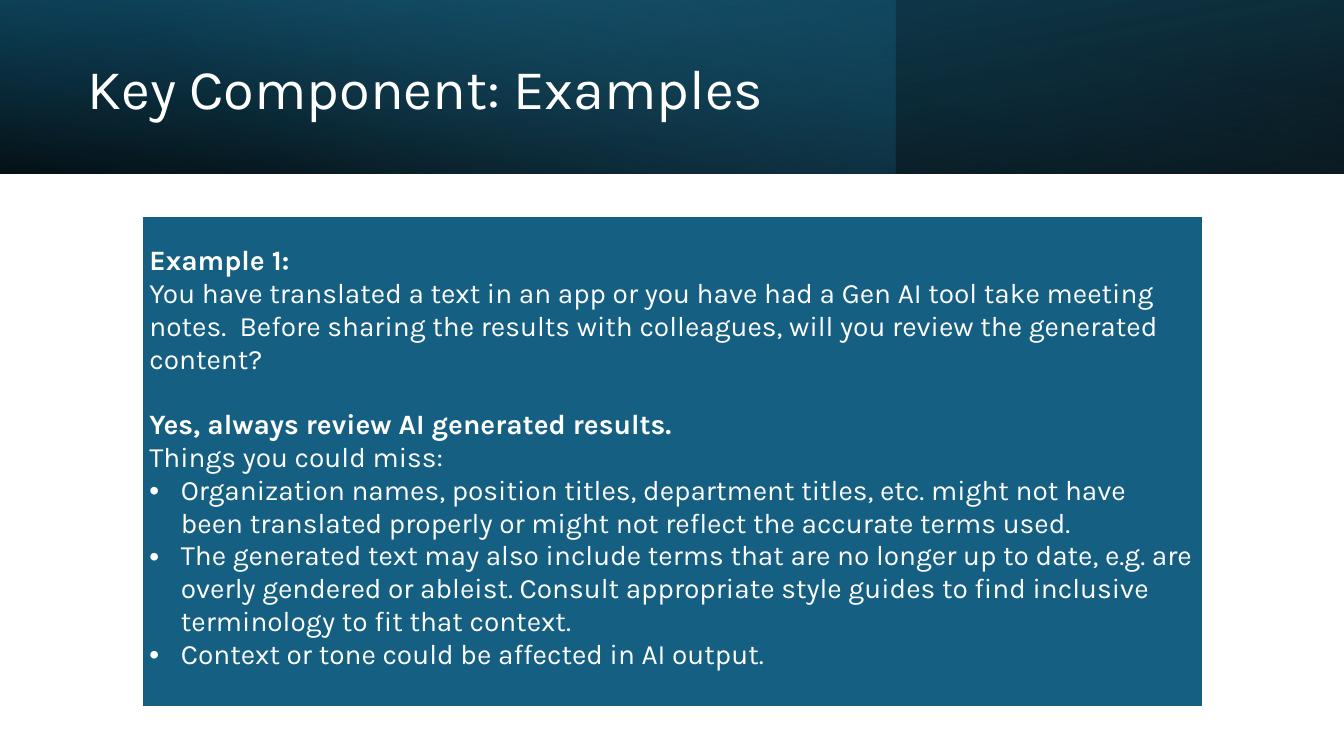
from dataclasses import dataclass

from lxml import etree
from pptx import Presentation
from pptx.dml.color import RGBColor
from pptx.enum.shapes import MSO_SHAPE
from pptx.enum.text import MSO_ANCHOR, MSO_AUTO_SIZE, PP_ALIGN
from pptx.oxml.ns import qn
from pptx.util import Pt

RECTANGLE = MSO_SHAPE.RECTANGLE
MIDDLE = MSO_ANCHOR.MIDDLE
TOP = MSO_ANCHOR.TOP
NO_AUTOFIT = MSO_AUTO_SIZE.NONE
LEFT = PP_ALIGN.LEFT

TITLE = "Key Component: Examples"
EXAMPLE = [
    ("heading", "Example 1:"),
    ("body", "You have translated a text in an app or you have had a Gen AI tool take meeting "
             "notes.  Before sharing the results with colleagues, will you review the generated content?"),
    ("heading", "Yes, always review AI generated results."),
    ("body", "Things you could miss:"),
    ("bullet", "Organization names, position titles, department titles, etc. might not have been "
               "translated properly or might not reflect the accurate terms used."),
    ("bullet", "The generated text may also include terms that are no longer up to date, e.g. are "
               "overly gendered or ableist. Consult appropriate style guides to find inclusive "
               "terminology to fit that context."),
    ("bullet", "Context or tone could be affected in AI output."),
]


@dataclass(frozen=True)
class Theme:
    font: str = "Karla"
    title_size: float = 40
    body_size: float = 20
    white: str = "FFFFFF"
    black: str = "000000"
    panel: str = "156082"
    deep: str = "104862"
    sky: str = "46B1E1"


THEME = Theme()
SLIDE_W, SLIDE_H = 960, 540
BANNER_H = 123.8
TITLE_BOX = (55.4, 19.4, 555.8, 91.4)
PANEL_BOX = (101.5, 154.8, 757.4, 350.6)
PANEL_MARGIN = 5.2
PANEL_TOP_MARGIN = 20.4
SECTION_GAP = 23.4
BULLET_INDENT = 22.5
BORDERS = {"a:lnL": 1, "a:lnR": 1, "a:lnT": 1, "a:lnB": 3}

BANNER_LAYERS = [
    (SLIDE_W, 180, True, 100, [(0, THEME.black, 96), (100, THEME.deep, 100)]),
    (SLIDE_W * 2 / 3, 0, False, 140, [(0, THEME.panel, 41), (74, THEME.sky, 0)]),
    (SLIDE_W, 0, True, 260, [(0, THEME.black, 63), (78, THEME.panel, 15)]),
]


def add_child(parent, tag, **attributes):
    child = etree.SubElement(parent, qn(tag))
    for key, value in attributes.items():
        child.set(key, str(value))
    return child


def style_run(run, size, bold=False):
    run.font.name = THEME.font
    run.font.size = Pt(size)
    run.font.bold = bold
    run.font.color.rgb = RGBColor.from_string(THEME.white)


def add_banner_layer(slide, width, rotation, flipped, angle, stops):
    layer = slide.shapes.add_shape(RECTANGLE, 0, 0, Pt(width), Pt(BANNER_H))
    layer.shadow.inherit = False
    layer.line.fill.background()
    layer.rotation = rotation
    layer.fill.gradient()
    properties = layer._element.spPr
    if flipped:
        properties.find(qn("a:xfrm")).set("flipH", "1")
    gradient = properties.find(qn("a:gradFill"))
    for child in list(gradient):
        gradient.remove(child)
    gradient.set("rotWithShape", "1")
    stop_list = add_child(gradient, "a:gsLst")
    for position, color, opacity in stops:
        stop = add_child(stop_list, "a:gs", pos=position * 1000)
        tint = add_child(stop, "a:srgbClr", val=color)
        add_child(tint, "a:alpha", val=opacity * 1000)
    add_child(gradient, "a:lin", ang=angle * 60000, scaled=0)


def add_title(slide):
    title = slide.shapes.title
    slide.shapes._spTree.append(title._element)
    title.left, title.top, title.width, title.height = map(Pt, TITLE_BOX)
    frame = title.text_frame
    frame.word_wrap = True
    frame.auto_size = NO_AUTOFIT
    frame.vertical_anchor = MIDDLE
    heading = frame.paragraphs[0]
    heading.alignment = LEFT
    heading.line_spacing = 0.9
    run = heading.add_run()
    run.text = TITLE
    style_run(run, THEME.title_size)


def add_borders(cell):
    properties = cell._tc.get_or_add_tcPr()
    for index, (edge, width) in enumerate(BORDERS.items()):
        border = etree.Element(qn(edge), w=str(Pt(width)))
        add_child(add_child(border, "a:solidFill"), "a:srgbClr", val=THEME.white)
        properties.insert(index, border)


def add_example_panel(slide):
    table = slide.shapes.add_table(1, 1, *map(Pt, PANEL_BOX)).table
    table.first_row = False
    table.horz_banding = False
    cell = table.cell(0, 0)
    cell.fill.solid()
    cell.fill.fore_color.rgb = RGBColor.from_string(THEME.panel)
    cell.margin_left = cell.margin_right = Pt(PANEL_MARGIN)
    cell.margin_top = Pt(PANEL_TOP_MARGIN)
    cell.margin_bottom = Pt(PANEL_MARGIN / 2)
    cell.vertical_anchor = TOP
    add_borders(cell)
    frame = cell.text_frame
    for index, (role, words) in enumerate(EXAMPLE):
        paragraph = frame.add_paragraph() if index else frame.paragraphs[0]
        if role == "bullet":
            properties = paragraph._p.get_or_add_pPr()
            properties.set("marL", str(Pt(BULLET_INDENT)))
            properties.set("indent", str(-Pt(BULLET_INDENT)))
            add_child(properties, "a:buFont", typeface="Arial")
            add_child(properties, "a:buChar", char="•")
        if role == "heading" and index:
            paragraph.space_before = Pt(SECTION_GAP)
        run = paragraph.add_run()
        run.text = words
        style_run(run, THEME.body_size, role == "heading")


def main():
    deck = Presentation()
    deck.slide_width, deck.slide_height = Pt(SLIDE_W), Pt(SLIDE_H)
    slide = deck.slides.add_slide(deck.slide_layouts[5])
    for layer in BANNER_LAYERS:
        add_banner_layer(slide, *layer)
    add_title(slide)
    add_example_panel(slide)
    deck.save("out.pptx")


if __name__ == "__main__":
    main()
